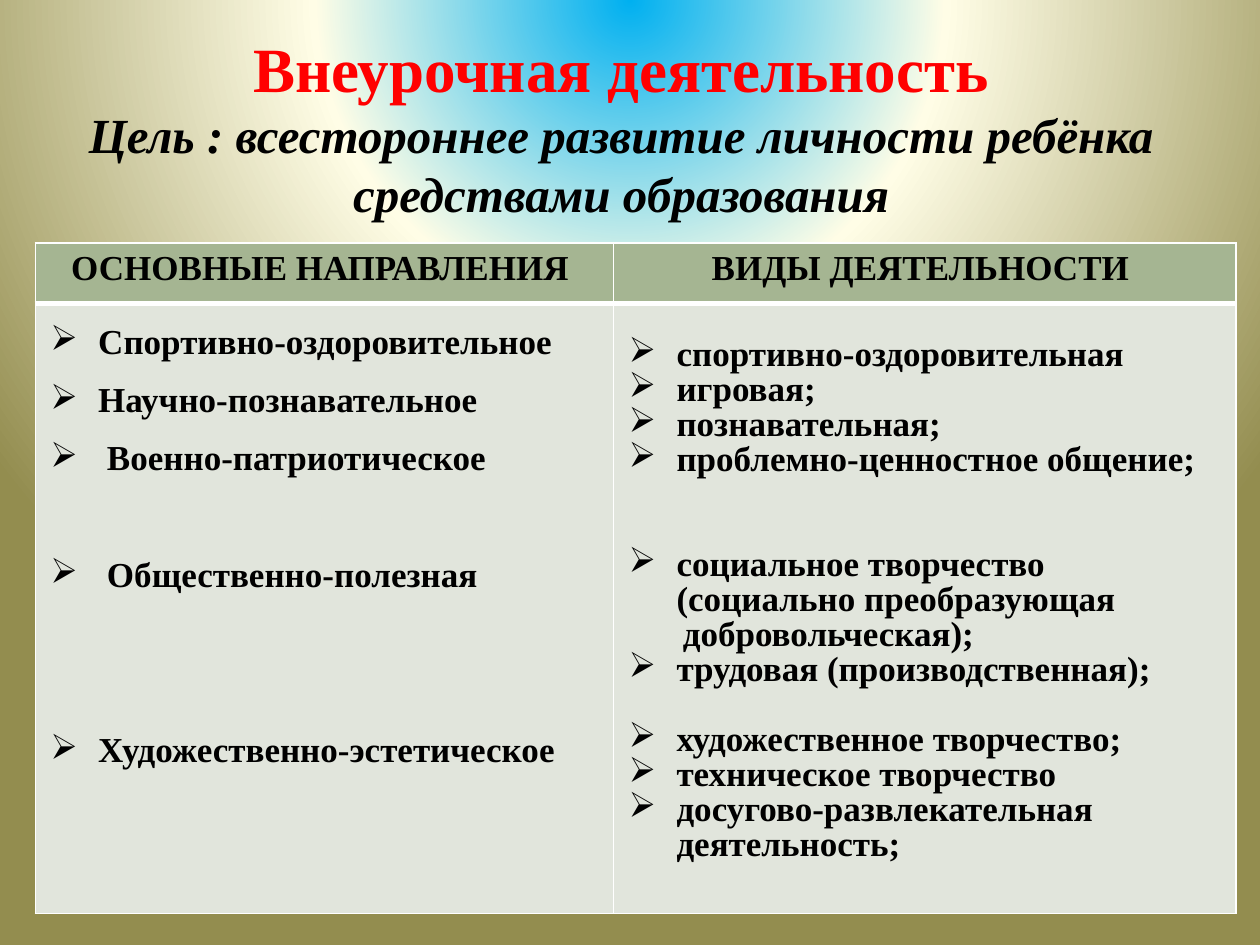
from pptx import Presentation
from pptx.dml.color import RGBColor
from pptx.enum.text import MSO_ANCHOR, MSO_AUTO_SIZE, PP_ALIGN
from pptx.oxml import parse_xml
from pptx.oxml.ns import nsdecls, qn
from pptx.util import Inches, Pt
from lxml.etree import SubElement

FONT = "Times New Roman"
RED = RGBColor(0xFF, 0x00, 0x00)
BLACK = RGBColor(0x00, 0x00, 0x00)
WHITE = RGBColor(0xFF, 0xFF, 0xFF)
SAGE = RGBColor(0xA5, 0xB5, 0x92)
PALE_SAGE = RGBColor(0xE1, 0xE5, 0xDC)
GLOW = [
    (0, RGBColor(0x00, 0xB0, 0xF0)),
    (40, RGBColor(0xFF, 0xFD, 0xE6)),
    (100, RGBColor(0x93, 0x8D, 0x4F)),
]

HEADINGS = ["ОСНОВНЫЕ НАПРАВЛЕНИЯ ", "ВИДЫ ДЕЯТЕЛЬНОСТИ "]
COLUMN_WIDTHS = [4.59, 4.94]
ROW_HEIGHTS = [0.48, 4.84]
HANGING = 0.38

# Each entry: text, space before in points, has a bullet
DIRECTIONS = [
    ("Спортивно-оздоровительное", 0, True),
    ("Научно-познавательное", 0, True),
    (" Военно-патриотическое", 0, True),
    (" Общественно-полезная", 33.4, True),
    ("Художественно-эстетическое", 66.8, True),
]
ACTIVITIES = [
    ("спортивно-оздоровительная", 0, True),
    ("игровая;", 0, True),
    ("познавательная;", 0, True),
    ("проблемно-ценностное общение;", 0, True),
    ("социальное творчество (социально преобразующая", 40, True),
    ("добровольческая);", 0, False),
    ("трудовая (производственная);", 0, True),
    ("художественное творчество;", 20, True),
    ("техническое творчество", 0, True),
    ("досугово-развлекательная деятельность;", 0, True),
]


def add_run(paragraph, text, size, color=BLACK, italic=None):
    """Add one bold run in the slide font."""
    run = paragraph.add_run()
    run.text = text
    font = run.font
    font.name, font.size, font.bold, font.italic = FONT, Pt(size), True, italic
    font.color.rgb = color


def paint_background(slide):
    """Fill the background with a glow centred above the slide."""
    stops = "".join(
        f'<a:gs pos="{place * 1000}"><a:srgbClr val="{color}"/></a:gs>'
        for place, color in GLOW
    )
    glow = parse_xml(
        f'<a:gradFill {nsdecls("a")} rotWithShape="1"><a:gsLst>{stops}</a:gsLst>'
        '<a:path path="circle"><a:fillToRect l="50000" t="-80000" r="50000" b="180000"/>'
        "</a:path></a:gradFill>"
    )
    slide.background.fill.solid()
    properties = slide.element.find(".//" + qn("p:bgPr"))
    properties.replace(properties[0], glow)


def place_title(slide, left, top, width, height):
    """Place the heading and the goal in the title placeholder."""
    title = slide.shapes.title
    title.left, title.top, title.width, title.height = left, top, width, height
    frame = title.text_frame
    frame.word_wrap = True
    frame.auto_size = MSO_AUTO_SIZE.NONE
    frame.vertical_anchor = MSO_ANCHOR.MIDDLE
    paragraph = frame.paragraphs[0]
    paragraph.alignment = PP_ALIGN.CENTER
    add_run(paragraph, "Внеурочная деятельность", 36, RED)
    paragraph.add_line_break()
    goal = "Цель : всестороннее развитие личности ребёнка средствами образования"
    add_run(paragraph, goal, 28, italic=True)


def style_cell(cell, fill, top_line, bottom_line):
    """Give a cell white borders and a plain fill."""
    properties = cell._tc.get_or_add_tcPr()
    for side, points in (("L", 1), ("R", 1), ("T", top_line), ("B", bottom_line)):
        line = SubElement(properties, qn(f"a:ln{side}"), w=str(Pt(points)))
        SubElement(SubElement(line, qn("a:solidFill")), qn("a:srgbClr"), val=str(WHITE))
    cell.fill.solid()
    cell.fill.fore_color.rgb = fill


def fill_list(cell, entries, line_spacing, top_margin):
    """Write the entries of one column as a hanging bullet list."""
    cell.margin_left = cell.margin_right = Inches(0.12)
    cell.margin_top, cell.margin_bottom = Inches(top_margin), 0
    frame = cell.text_frame
    for index, (text, gap, bulleted) in enumerate(entries):
        paragraph = frame.add_paragraph() if index else frame.paragraphs[0]
        paragraph.line_spacing = line_spacing
        paragraph.space_before = Pt(gap)
        properties = paragraph._p.get_or_add_pPr()
        properties.set("marL", str(Inches(HANGING if bulleted else HANGING + 0.05)))
        properties.set("indent", str(Inches(-HANGING if bulleted else 0)))
        if bulleted:
            SubElement(properties, qn("a:buChar"), char="➢")
        add_run(paragraph, text, 20)


def place_table(slide, left, top, width, height):
    """Place the table of directions and kinds of activity."""
    table = slide.shapes.add_table(2, 2, left, top, width, height).table
    table.horz_banding = False
    for column, inches in zip(table.columns, COLUMN_WIDTHS):
        column.width = Inches(inches)
    for row, inches in zip(table.rows, ROW_HEIGHTS):
        row.height = Inches(inches)
    for index, heading in enumerate(HEADINGS):
        head, body = table.cell(0, index), table.cell(1, index)
        style_cell(head, SAGE, 1, 3)
        style_cell(body, PALE_SAGE, 3, 1)
        paragraph = head.text_frame.paragraphs[0]
        paragraph.alignment = PP_ALIGN.CENTER
        add_run(paragraph, heading, 20)
    fill_list(table.cell(1, 0), DIRECTIONS, 1.5, 0)
    fill_list(table.cell(1, 1), ACTIVITIES, 0.9, 0.28)


def main():
    """Build the slide and save it."""
    deck = Presentation()
    deck.slide_width, deck.slide_height = Inches(10), Inches(7.5)
    slide = deck.slides.add_slide(deck.slide_layouts[5])
    paint_background(slide)
    place_title(slide, Inches(0.43), Inches(0.68), Inches(9), Inches(0.64))
    place_table(slide, Inches(0.28), Inches(1.93),
                Inches(sum(COLUMN_WIDTHS)), Inches(sum(ROW_HEIGHTS)))
    deck.save("out.pptx")


if __name__ == "__main__":
    main()
